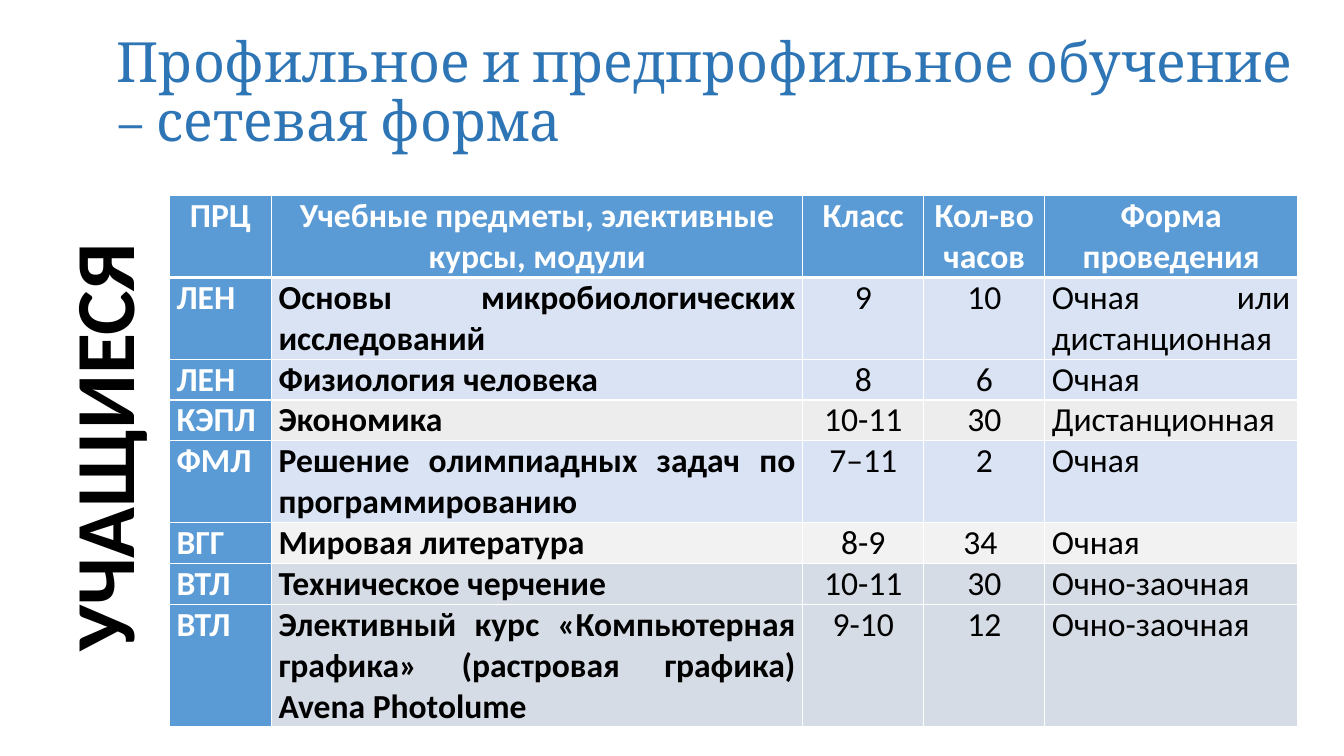
from lxml import etree
from pptx import Presentation
from pptx.dml.color import RGBColor
from pptx.enum.text import MSO_ANCHOR, PP_ALIGN
from pptx.oxml.ns import qn
from pptx.util import Cm, Pt

LEFT, MID, JUST = PP_ALIGN.LEFT, PP_ALIGN.CENTER, PP_ALIGN.JUSTIFY
CENTER = MSO_ANCHOR.MIDDLE

COLORS = {
    "title": "2E75B6", "head": "5B9BD5", "white": "FFFFFF", "black": "000000",
    "blue": "DAE3F3", "gray": "EDEDED", "pale": "F2F2F2", "steel": "D6DCE5",
}
WIDTHS = [2.57, 13.39, 3.05, 3.05, 6.37]
LINE = 1.03  # height of one table text line

HEAD = ["ПРЦ", "Учебные предметы, элективные курсы, модули", "Класс",
        "Кол-во часов", "Форма проведения"]
# row fill, text lines, cell texts
ROWS = [
    ("blue", 2, ["ЛЕН", "Основы микробиологических исследований", "9", "10",
                 "Очная или дистанционная"]),
    ("blue", 1, ["ЛЕН", "Физиология человека", "8", "6", "Очная"]),
    ("gray", 1, ["КЭПЛ", "Экономика", "10-11", "30", "Дистанционная"]),
    ("blue", 2, ["ФМЛ", "Решение олимпиадных задач по программированию",
                 "7–11", "2", "Очная"]),
    ("pale", 1, ["ВГГ", "Мировая литература", "8-9", "34 ", "Очная"]),
    ("steel", 1, ["ВТЛ", "Техническое черчение", "10-11", "30", "Очно-заочная"]),
    ("steel", 3, ["ВТЛ", "Элективный курс «Компьютерная графика» (растровая "
                  "графика) Avena Photolume", "9-10", "12", "Очно-заочная"]),
]


def rgb(name):
    return RGBColor.from_string(COLORS[name])


def line(parent, tag, width, color):
    """Add a solid line element to cell or run properties."""
    edge = etree.SubElement(parent, qn(tag), w=str(Pt(width)))
    fill = etree.SubElement(edge, qn("a:solidFill"))
    etree.SubElement(fill, qn("a:srgbClr"), val=COLORS[color])
    return edge


class Deck:
    def __init__(self, slide, font="Calibri", size=24):
        self.slide, self.font, self.size = slide, font, size

    def run(self, para, text, color, bold=False, font=None, size=None):
        run = para.add_run()
        run.text = text
        run.font.name = font or self.font
        run.font.size = Pt(size or self.size)
        run.font.bold = bold
        run.font.color.rgb = rgb(color)
        return run

    def box(self, x, y, w, h, text, color, wrap=True, turn=0, **style):
        box = self.slide.shapes.add_textbox(Cm(x), Cm(y), Cm(w), Cm(h))
        box.rotation = turn
        frame = box.text_frame
        frame.word_wrap = wrap
        frame.vertical_anchor = CENTER
        para = frame.paragraphs[0]
        para.line_spacing = 0.9 if wrap else 1.0
        return self.run(para, text, color, **style)

    def cell(self, cell, text, fill, color, bold, align, base):
        cell.margin_left = cell.margin_right = Cm(0.18)
        cell.margin_top = cell.margin_bottom = 0
        para = cell.text_frame.paragraphs[0]
        para.alignment = align
        self.run(para, text, color, bold)
        # Borders come before the fill in the cell properties
        props = cell._tc.get_or_add_tcPr()
        for tag, width in (("a:lnL", 1), ("a:lnR", 1), ("a:lnT", 1), ("a:lnB", base)):
            line(props, tag, width, "white")
        cell.fill.solid()
        cell.fill.fore_color.rgb = rgb(fill)

    def table(self, x, y, widths, head, rows):
        rows = [("head", 2, head)] + rows
        total = sum(lines for _, lines, _ in rows)
        grid = self.slide.shapes.add_table(
            len(rows), len(widths), Cm(x), Cm(y),
            Cm(sum(widths)), Cm(total * LINE)).table
        for col, width in zip(grid.columns, widths):
            col.width = Cm(width)
        for r, (fill, lines, texts) in enumerate(rows):
            grid.rows[r].height = Cm(lines * LINE)
            for c, text in enumerate(texts):
                blue = r == 0 or c == 0
                self.cell(grid.cell(r, c), text,
                          fill="head" if blue else fill,
                          color="white" if blue else "black",
                          bold=blue or c == 1,
                          align=MID if r == 0 or c in (2, 3) else JUST,
                          base=3 if r == 0 else 1)


def main():
    show = Presentation()
    show.slide_width, show.slide_height = Cm(33.87), Cm(19.05)
    deck = Deck(show.slides.add_slide(show.slide_layouts[6]))

    # Title
    deck.box(2.69, 0.53, 30.3, 3.68,
             "Профильное и предпрофильное обучение – сетевая форма",
             "title", font="Cambria", size=39.6)

    # Course table
    deck.table(4.27, 4.93, WIDTHS, HEAD, ROWS)

    # Side label with a thin white outline
    label = deck.box(-2.92, 9.8, 10.92, 2.82, "УЧАЩИЕСЯ", "black",
                     wrap=False, turn=270, bold=True, size=60)
    props = label.font._element
    props.insert(0, line(props, "a:ln", 0.75, "white"))

    show.save("out.pptx")


if __name__ == "__main__":
    main()
